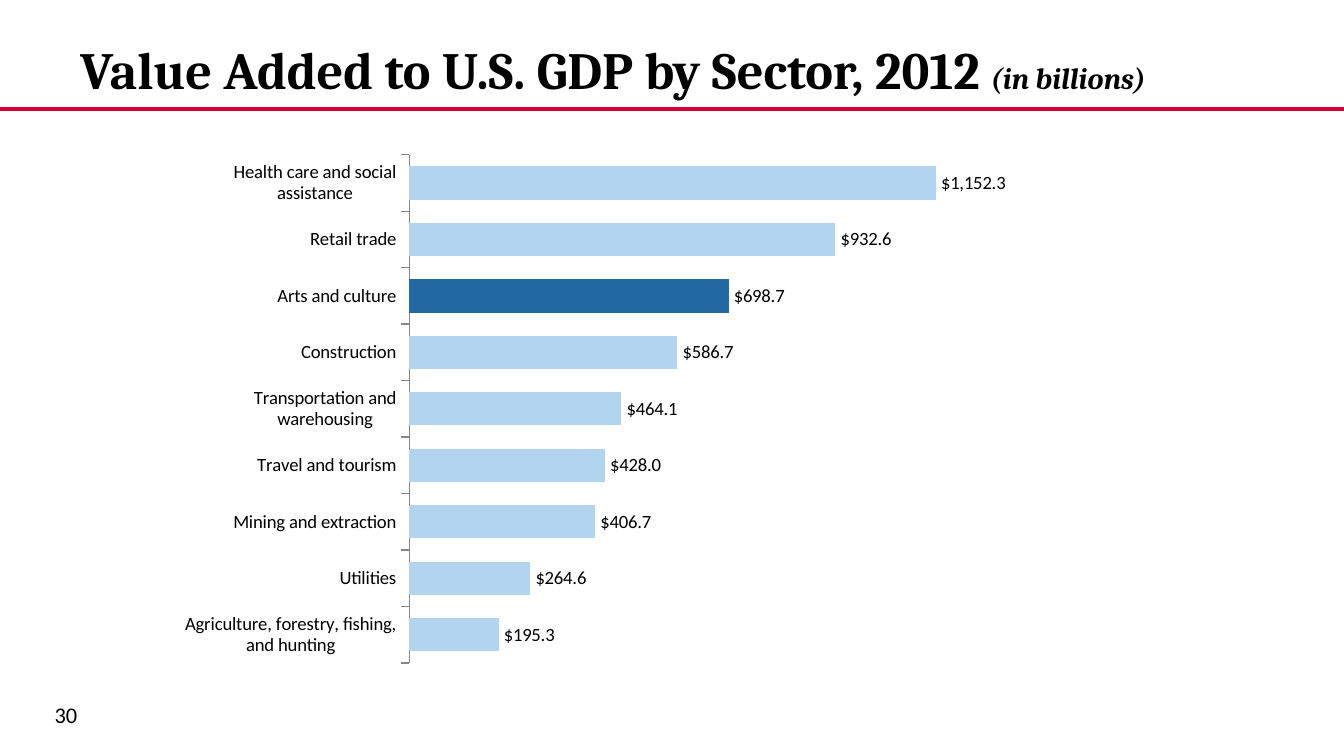
from lxml import etree
from pptx import Presentation
from pptx import util as u
from pptx.chart.data import CategoryChartData
from pptx.dml.color import RGBColor
from pptx.enum import chart as ch, shapes, text
from pptx.oxml import parse_xml
from pptx.oxml.ns import nsdecls, qn

# Content
TITLE = [
    ("Value Added to U.S. GDP by Sector, 2012 ", {"size": 28, "bold": True}),
    ("(in billions)", {"size": 16, "bold": True, "italic": True}),
]
PAGE_NUMBER = "30"
HIGHLIGHT = "Arts and culture"
SECTORS = [  # bottom bar first
    ("Agriculture, forestry, fishing, and hunting", 195.3),
    ("Utilities", 264.6),
    ("Mining and extraction", 406.7),
    ("Travel and tourism", 428.0),
    ("Transportation and warehousing", 464.1),
    ("Construction", 586.7),
    (HIGHLIGHT, 698.7),
    ("Retail trade", 932.6),
    ("Health care and social assistance", 1152.3),
]
PLOT = {"x": 0.254, "y": 0.053, "w": 0.705, "h": 0.8}  # shares of the chart frame


class Theme:
    heading = "Cambria"
    body = "Calibri"
    number_size = 12
    chart_size = 10
    ink = RGBColor.from_string("000000")
    rule = RGBColor.from_string("D20032")
    bar = RGBColor.from_string("B3D4EF")
    accent = RGBColor.from_string("2268A2")
    axis = RGBColor.from_string("868686")


def set_font(font, name, size, bold=False, italic=False):
    font.name, font.size = name, u.Pt(size)
    font.bold, font.italic = bold, italic
    font.color.rgb = Theme.ink


def add_text(page, spans, place, font, align=text.PP_ALIGN.LEFT,
             anchor=text.MSO_ANCHOR.TOP):
    """Add one paragraph made of (words, font format) spans."""
    box = page.shapes.add_textbox(*map(u.Cm, place))
    frame = box.text_frame
    frame.word_wrap = True
    frame.vertical_anchor = anchor
    para = frame.paragraphs[0]
    para.alignment = align
    for words, style in spans:
        span = para.add_run()
        span.text = words
        set_font(span.font, font, **style)
    return box


def place_plot(chart):
    """Fix the inner plot area inside the chart frame."""
    area = chart._chartSpace.find(".//" + qn("c:plotArea"))
    for old in area.findall(qn("c:layout")):
        area.remove(old)
    modes = '<c:xMode val="edge"/><c:yMode val="edge"/>'
    sizes = "".join(f'<c:{key} val="{share}"/>' for key, share in PLOT.items())
    area.insert(0, parse_xml(
        f'<c:layout {nsdecls("c")}><c:manualLayout><c:layoutTarget val="inner"/>'
        f"{modes}{sizes}</c:manualLayout></c:layout>"))


def add_sector_chart(page, place):
    data = CategoryChartData(number_format='"$"#,##0.0')
    data.categories = [name for name, _ in SECTORS]
    data.add_series("Series 1", [value for _, value in SECTORS])
    chart = page.shapes.add_chart(
        ch.XL_CHART_TYPE.BAR_CLUSTERED, *map(u.Cm, place), data).chart
    chart.has_legend = chart.has_title = False
    set_font(chart.font, Theme.body, Theme.chart_size)
    place_plot(chart)

    # Axes
    values, sectors = chart.value_axis, chart.category_axis
    values.minimum_scale, values.maximum_scale = 0, 1400
    values.has_major_gridlines = False
    values.visible = False
    sectors.major_tick_mark = ch.XL_TICK_MARK.OUTSIDE
    sectors.format.line.color.rgb = Theme.axis

    # Bars and labels
    plot = chart.plots[0]
    plot.gap_width = 70
    plot.vary_by_categories = False
    series = plot.series[0]
    series.format.fill.solid()
    series.format.fill.fore_color.rgb = Theme.bar
    position = [name for name, _ in SECTORS].index(HIGHLIGHT)
    fill = series.points[position].format.fill
    fill.solid()
    fill.fore_color.rgb = Theme.accent
    labels = series.data_labels
    labels.show_value = True
    labels.number_format = '"$"#,##0.0'
    labels.number_format_is_linked = False
    labels.position = ch.XL_LABEL_POSITION.OUTSIDE_END
    set_font(labels.font, Theme.body, Theme.chart_size)


def main():
    deck = Presentation()
    deck.slide_width, deck.slide_height = u.Cm(25.4), u.Cm(14.29)
    page = deck.slides.add_slide(deck.slide_layouts[6])

    # Rule under the title
    rule = page.shapes.add_connector(
        shapes.MSO_CONNECTOR.STRAIGHT, 0, u.Cm(2.06), deck.slide_width, u.Cm(2.06))
    rule.line.color.rgb = Theme.rule
    rule.line.width = u.Pt(2)
    etree.SubElement(rule._element.spPr, qn("a:effectLst"))

    # Page number and title
    add_text(page, [(PAGE_NUMBER, {"size": Theme.number_size})],
             (0.64, 13.13, 1.07, 0.76), Theme.body,
             align=text.PP_ALIGN.RIGHT, anchor=text.MSO_ANCHOR.MIDDLE)
    title = add_text(page, TITLE, (1.27, 0.58, 22.86, 1.45), Theme.heading)
    title.text_frame.auto_size = text.MSO_AUTO_SIZE.SHAPE_TO_FIT_TEXT

    add_sector_chart(page, (3.38, 2.29, 17.15, 12.01))
    deck.save("out.pptx")


if __name__ == "__main__":
    main()
